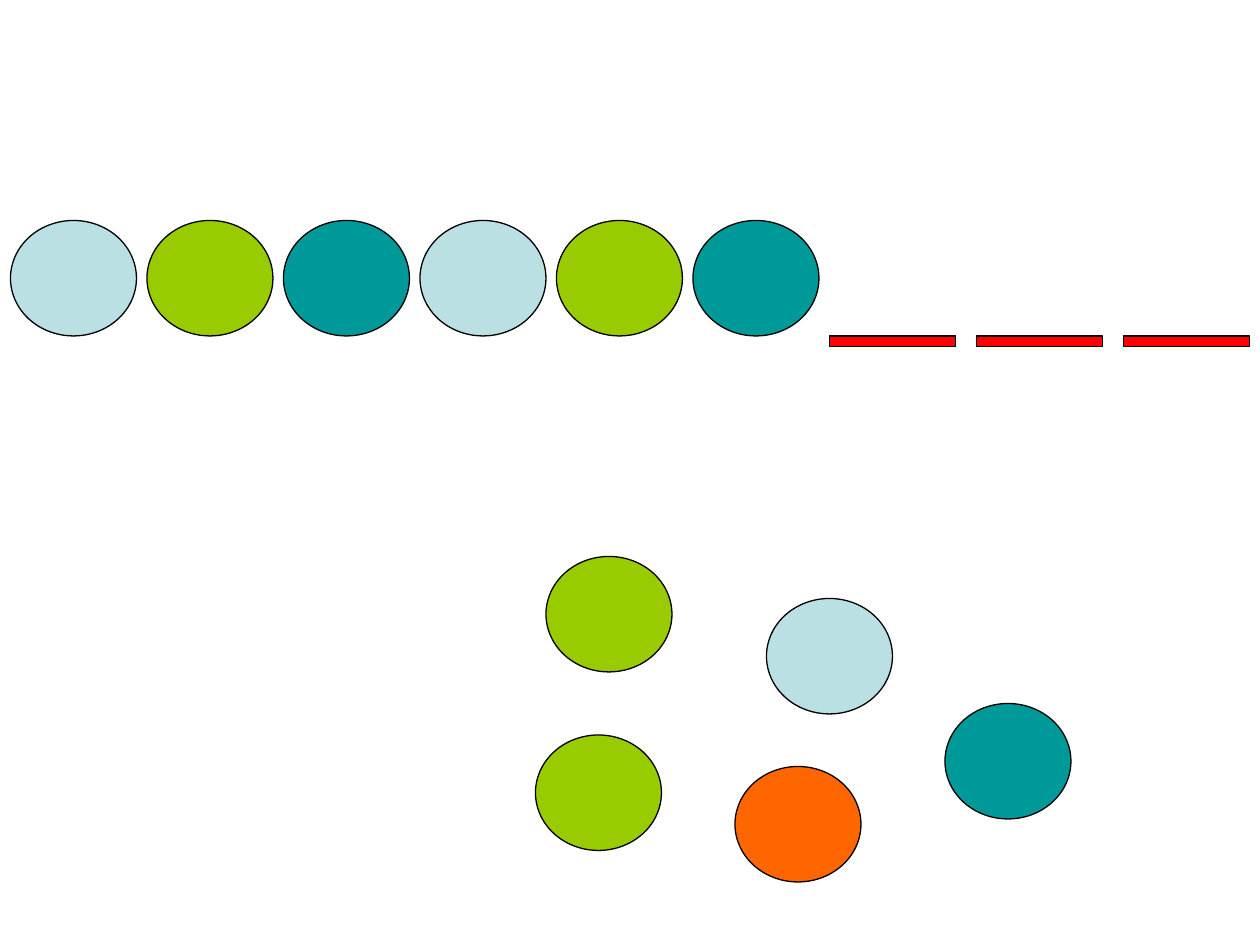
from pptx import Presentation
from pptx.dml.color import RGBColor
from pptx.enum.shapes import MSO_SHAPE as Shape
from pptx.util import Pt

# Content
PALE, GREEN, TEAL, ORANGE = "BBE0E3", "99CC00", "009999", "FF6600"
RED, BLACK = "FF0000", "000000"
PATTERN = [PALE, GREEN, TEAL] * 2
BLANK_COUNT = 3
CHOICES = [  # left, top, colour
    (416, 424, GREEN),
    (560, 584, ORANGE),
    (720, 536, TEAL),
    (584, 456, PALE),
    (408, 560, GREEN),
]

# Layout in px, 96 to the inch
SCALE = 9525
SLIDE_SIZE = (960, 720)
CIRCLE_SIZE = (96, 88)
BLANK_SIZE = (96, 8)
ROW_LEFT, ROW_TOP, ROW_STEP = 8, 168, 104
BLANK_LEFT, BLANK_STEP = 632, 112
BLANK_TOP = ROW_TOP + CIRCLE_SIZE[1]


def px(*lengths):
    return [length * SCALE for length in lengths]


def color(value):
    return RGBColor.from_string(value)


def add_piece(slide, kind, left, top, size, fill):
    piece = slide.shapes.add_shape(kind, *px(left, top, *size))
    piece.shadow.inherit = False
    piece.fill.solid()
    piece.fill.fore_color.rgb = color(fill)
    piece.line.color.rgb = color(BLACK)
    piece.line.width = Pt(0.75)


def main():
    deck = Presentation()
    deck.slide_width, deck.slide_height = px(*SLIDE_SIZE)
    slide = deck.slides.add_slide(deck.slide_layouts[6])

    # Pattern row
    for index, fill in enumerate(PATTERN):
        add_piece(slide, Shape.OVAL, ROW_LEFT + index * ROW_STEP, ROW_TOP, CIRCLE_SIZE, fill)

    # Blanks to complete
    for index in range(BLANK_COUNT):
        add_piece(slide, Shape.RECTANGLE, BLANK_LEFT + index * BLANK_STEP, BLANK_TOP, BLANK_SIZE, RED)

    # Circles to choose from
    for left, top, fill in CHOICES:
        add_piece(slide, Shape.OVAL, left, top, CIRCLE_SIZE, fill)

    deck.save("out.pptx")


if __name__ == "__main__":
    main()
